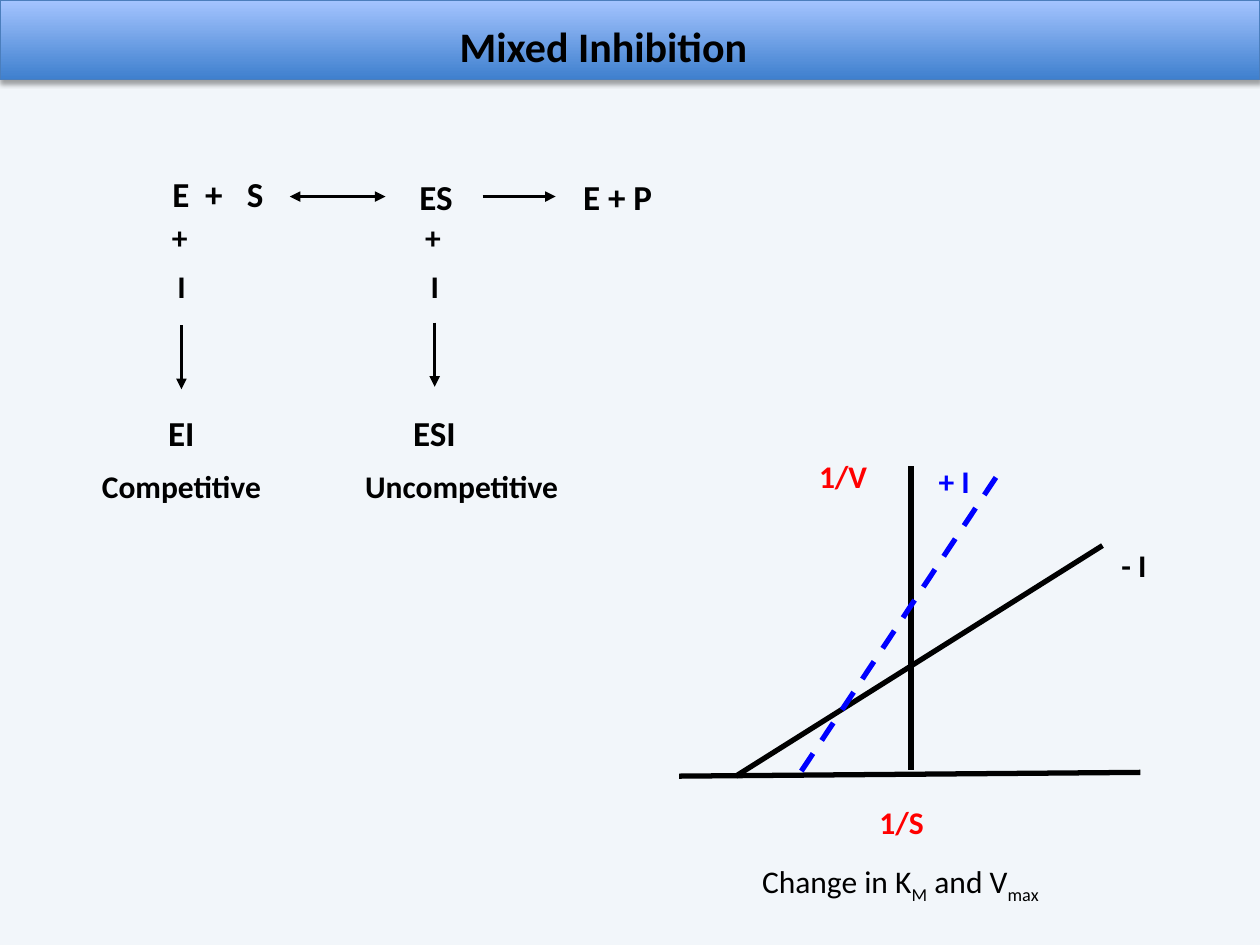
"""Build the slide on mixed inhibition: reaction scheme and line plot."""
from lxml.etree import SubElement
from pptx import Presentation
from pptx.dml.color import RGBColor
from pptx.enum.dml import MSO_LINE
from pptx.enum.shapes import MSO_CONNECTOR, MSO_SHAPE
from pptx.enum.text import MSO_AUTO_SIZE
from pptx.oxml.ns import qn
from pptx.util import Inches, Pt

hue = RGBColor.from_string
BLACK, RED, BLUE = "000000", "FF0000", "0000FF"

deck = Presentation()
deck.slide_width, deck.slide_height = Inches(10), Inches(7.5)
CELL = deck.slide_width / 100
slide = deck.slides.add_slide(deck.slide_layouts[6])
slide.background.fill.solid()
slide.background.fill.fore_color.rgb = hue("F2F6FA")


def write(shapes, text, spot, size=18, color=BLACK, bold=True, inset=None):
    box = shapes.add_textbox(*(round(CELL * n) for n in spot))
    frame = box.text_frame
    frame.word_wrap = False
    frame.auto_size = MSO_AUTO_SIZE.SHAPE_TO_FIT_TEXT
    if inset:
        frame.margin_left = frame.margin_right = round(CELL * inset)
        frame.margin_top = frame.margin_bottom = round(CELL * inset)
    para = frame.paragraphs[0]
    para.text = text
    font = para.font
    font.name, font.size, font.bold = "Calibri", Pt(size), bold
    font.color.rgb = hue(color)
    return frame


def draw(shapes, ends, width=2, color=BLACK, tips=()):
    wire = shapes.add_connector(MSO_CONNECTOR.STRAIGHT, *(round(CELL * n) for n in ends))
    wire.line.width = Pt(width)
    wire.line.color.rgb = hue(color)
    props = wire._element.spPr
    for tip in tips:
        SubElement(props.find(qn("a:ln")), qn(tip), type="triangle")
    SubElement(props, qn("a:effectLst"))
    return wire


band = slide.shapes.add_shape(MSO_SHAPE.RECTANGLE, 0, 0, deck.slide_width, round(CELL * 6.3))
band.fill.gradient()
band.fill.gradient_angle = 90
for stop, shade in zip(band.fill.gradient_stops, ("3F80CE", "A4C4FF")):
    stop.color.rgb = hue(shade)
band.line.color.rgb = hue("4B7EBC")
band.line.width = Pt(0.75)
band.shadow.inherit = False
glow = SubElement(band._element.spPr.find(qn("a:effectLst")), qn("a:outerShdw"),
                  blurRad=str(Pt(3.1)), dist=str(Pt(1.8)), dir="5400000", rotWithShape="0")
SubElement(SubElement(glow, qn("a:srgbClr"), val=BLACK), qn("a:alpha"), val="35000")
write(slide.shapes, "Mixed Inhibition", (35.5, 1.1, 25.1, 5), 24)

start = write(slide.shapes, "E\t+\tS", (12.7, 13.2, 10.5, 4.4), 20)
start.word_wrap = True
props = start.paragraphs[0]._p.get_or_add_pPr()
tabs = props.find(qn("a:defRPr")).makeelement(qn("a:tabLst"))
props.insert(0, tabs)
for stop in (2.6, 5.9):
    SubElement(tabs, qn("a:tab"), pos=str(round(CELL * stop)), algn="l")

write(slide.shapes, "ES", (32.3, 13.4, 5.9, 4.4), 20)
write(slide.shapes, "E + P", (45.3, 13.4, 8.8, 4.4), 20)
draw(slide.shapes, (23, 15.6, 30.6, 15.6), tips=("a:headEnd", "a:tailEnd"))
draw(slide.shapes, (38.3, 15.6, 44.1, 15.6), tips=("a:tailEnd",))

for mid, top, bound, wide, kind, left, span in (
        (14.4, 25.8, "EI", 4.1, "Competitive", 7.1, 14.8),
        (34.5, 25.6, "ESI", 5.4, "Uncompetitive", 28, 17.5)):
    write(slide.shapes, "+", (mid - 1.75, 16.8, 3.9, 4))
    write(slide.shapes, "I", (mid - 1.3, 20.7, 2.7, 4))
    draw(slide.shapes, (mid, top, mid, top + 5.1), tips=("a:tailEnd",))
    write(slide.shapes, bound, (mid - wide / 2, 32.2, wide, 4.4), 20)
    write(slide.shapes, kind, (left, 36.6, span, 4))

plot = slide.shapes.add_group_shape().shapes
for ends in ((53.9, 61.6, 90.5, 61.3), (72.3, 37, 72.3, 61.1), (58.4, 61.6, 87.5, 43.3)):
    draw(plot, ends, 3)
draw(plot, (63.6, 61.2, 79.3, 37.5), 3, BLUE).line.dash_style = MSO_LINE.DASH
for text, color, spot in (
        ("1/V", RED, (64.6, 35.9, 6.2, 5.4)),
        ("1/S", RED, (69.4, 63.3, 5.7, 5.4)),
        ("+ I", BLUE, (74.1, 36.3, 4.4, 5.5)),
        ("- I", BLACK, (88.6, 42.9, 3.8, 5.5))):
    write(plot, text, spot, color=color, inset=0.4)

note = write(slide.shapes, "Change in K", (59.5, 67.9, 25.4, 4), bold=False).paragraphs[0]
for text, base in (("M", -25), (" and V", 0), ("max", -25)):
    run = note.add_run()
    run.text = text
    run._r.get_or_add_rPr().set("baseline", str(base * 1000))

deck.save("out.pptx")
